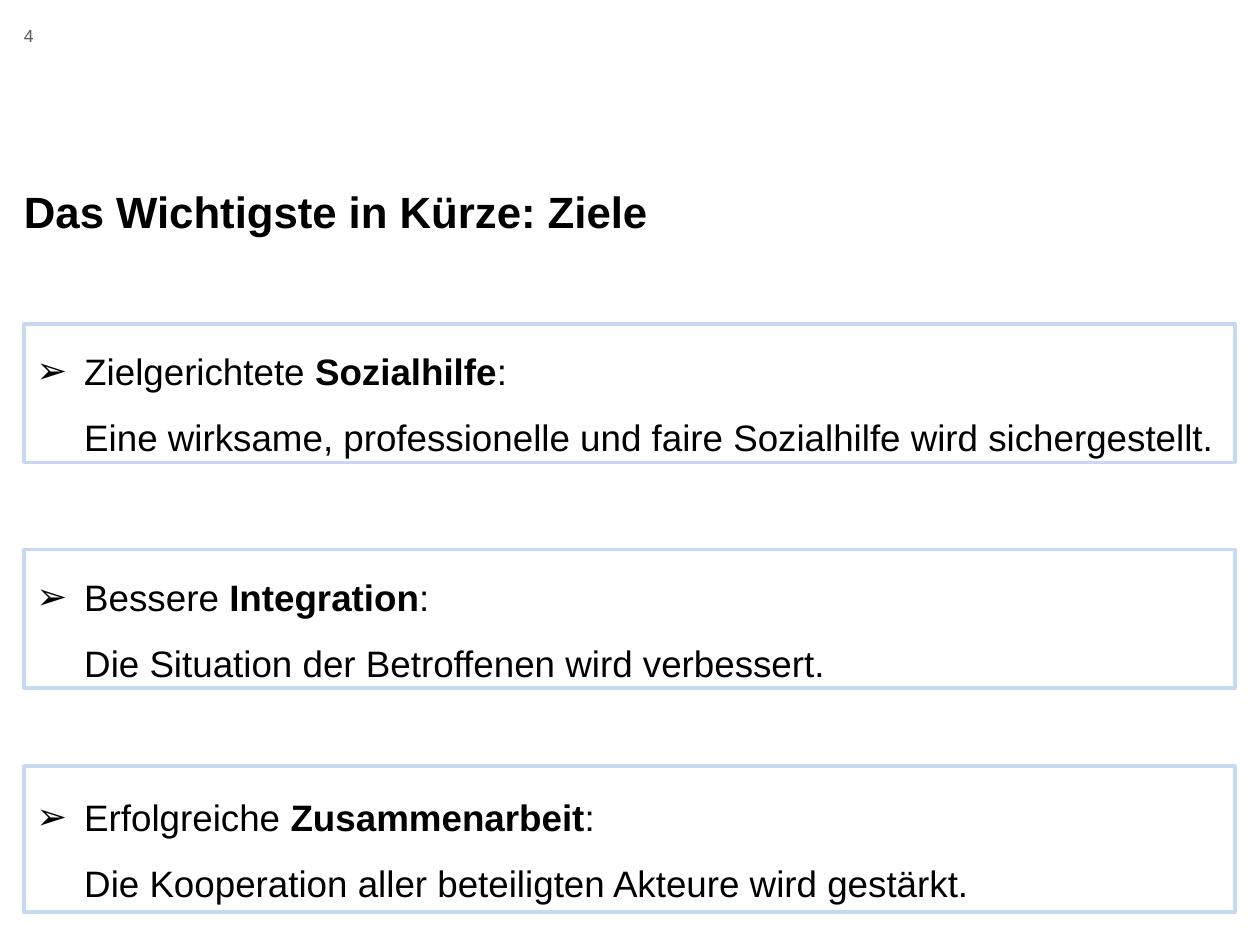
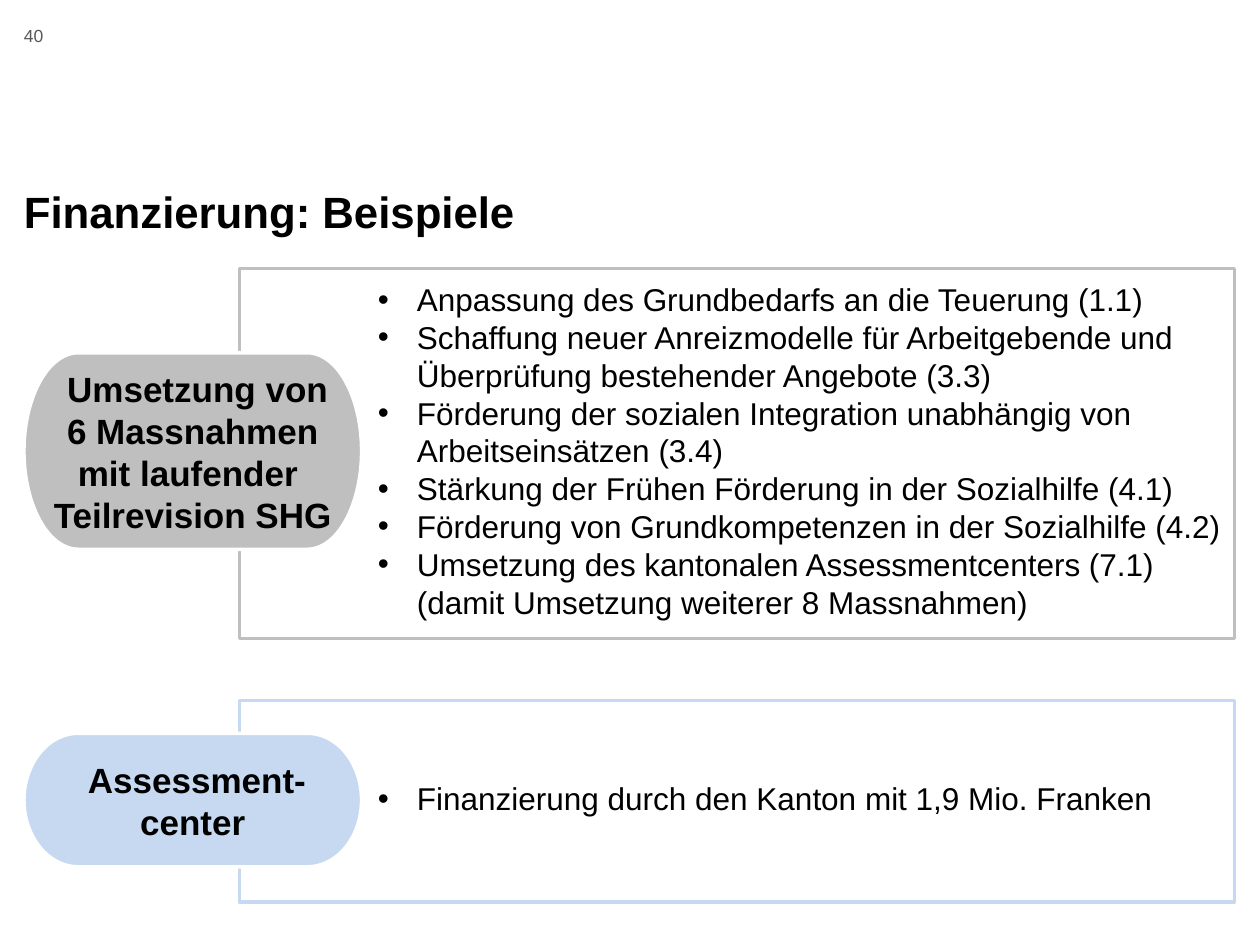
from lxml import etree
from pptx import Presentation
from pptx import util as u
from pptx.dml import color
from pptx.enum import shapes, text
from pptx.oxml import ns

PX = 9144
FONT = "Arial"
BLACK, WHITE, SLATE = "000000", "FFFFFF", "555959"
LIGHT_BLUE, GREY = "C6D9F1", "BFBFBF"
LEFT, CONTENT_WIDTH = 19, 961
BODY_LEFT, BODY_WIDTH = 190, 790
LABEL_WIDTH = 268


def px(length):
    return u.Emu(length * PX)


def rgb(value):
    return color.RGBColor.from_string(value)


class Deck:
    def __init__(self):
        self.presentation = Presentation()
        self.presentation.slide_width = px(1000)
        self.presentation.slide_height = px(750)
        self.slide = None

    def start(self, number, heading):
        layout = self.presentation.slide_layouts.get_by_name("Title Only")
        self.slide = self.presentation.slides.add_slide(layout)
        page = self.slide.shapes.add_textbox(px(LEFT), px(20), px(44), px(40))
        frame = self.frame(page, (0, 0, 0, 0), text.MSO_ANCHOR.TOP)
        self.run(frame.paragraphs[0], number, 10, SLATE)
        self.title(heading)

    def title(self, heading):
        title = self.slide.shapes.title
        title.left, title.top = px(LEFT), px(106)
        title.width, title.height = px(CONTENT_WIDTH), px(81)
        frame = self.frame(title, (0, 0, 0, 0), text.MSO_ANCHOR.BOTTOM)
        paragraph = frame.paragraphs[0]
        paragraph.alignment = text.PP_ALIGN.LEFT
        paragraph.line_spacing = 0.7
        self.run(paragraph, heading, 25, bold=True)

    def frame(self, shape, insets, anchor=text.MSO_ANCHOR.MIDDLE):
        frame = shape.text_frame
        frame.word_wrap = True
        frame.auto_size = text.MSO_AUTO_SIZE.NONE
        frame.vertical_anchor = anchor
        (frame.margin_left, frame.margin_top,
         frame.margin_right, frame.margin_bottom) = map(px, insets)
        return frame

    def paragraph(self, frame, index):
        return frame.add_paragraph() if index else frame.paragraphs[0]

    def run(self, paragraph, words, size, tint=BLACK, bold=False):
        for index, line in enumerate(words.split("\n")):
            if index:
                paragraph.add_line_break()
            run = paragraph.add_run()
            run.text = line
            run.font.name = FONT
            run.font.size = u.Pt(size)
            run.font.bold = bold
            run.font.color.rgb = rgb(tint)

    def bullet(self, paragraph, mark, indent):
        paragraph.alignment = text.PP_ALIGN.LEFT
        properties = paragraph._p.get_or_add_pPr()
        properties.set("marL", str(px(indent)))
        properties.set("indent", str(-px(indent)))
        etree.SubElement(properties, ns.qn("a:buFont")).set("typeface", FONT)
        etree.SubElement(properties, ns.qn("a:buChar")).set("char", mark)

    def panel(self, kind, box, line, fill=None):
        panel = self.slide.shapes.add_shape(kind, *map(px, box))
        panel.shadow.inherit = False
        panel.line.color.rgb = rgb(line)
        panel.line.width = u.Pt(2)
        if fill:
            panel.fill.solid()
            panel.fill.fore_color.rgb = rgb(fill)
        else:
            panel.fill.background()
        return panel

    def goal(self, top, height, lead, keyword, sentence):
        box = (LEFT, top, CONTENT_WIDTH, height)
        panel = self.panel(shapes.MSO_SHAPE.RECTANGLE, box, LIGHT_BLUE)
        paragraph = self.frame(panel, (10, 5, 10, 5)).paragraphs[0]
        self.bullet(paragraph, "➢", 38)
        paragraph.line_spacing = 1.5
        self.run(paragraph, lead + " ", 21)
        self.run(paragraph, keyword, 21, bold=True)
        self.run(paragraph, ":\n" + sentence, 21)

    def measures(self, top, height, tint, items):
        box = (BODY_LEFT, top, BODY_WIDTH, height)
        panel = self.panel(shapes.MSO_SHAPE.RECTANGLE, box, tint)
        frame = self.frame(panel, (110, 5, 10, 10))
        for index, item in enumerate(items):
            paragraph = self.paragraph(frame, index)
            self.bullet(paragraph, "•", 31)
            self.run(paragraph, item, 18)

    def label(self, top, height, tint, lines):
        box = (LEFT, top, LABEL_WIDTH, height)
        panel = self.panel(shapes.MSO_SHAPE.FLOWCHART_TERMINATOR, box, WHITE, tint)
        frame = self.frame(panel, (10, 0, 10, 0))
        for index, line in enumerate(lines):
            paragraph = self.paragraph(frame, index)
            paragraph.alignment = text.PP_ALIGN.CENTER
            self.run(paragraph, line, 20, bold=True)


def add_goals(deck):
    deck.start("4", "Das Wichtigste in Kürze: Ziele")
    goals = [
        (257, 110, "Zielgerichtete", "Sozialhilfe",
         "Eine wirksame, professionelle und faire Sozialhilfe wird sichergestellt."),
        (436, 110, "Bessere", "Integration",
         "Die Situation der Betroffenen wird verbessert."),
        (608, 116, "Erfolgreiche", "Zusammenarbeit",
         "Die Kooperation aller beteiligten Akteure wird gestärkt."),
    ]
    for goal in goals:
        deck.goal(*goal)


def add_financing(deck):
    deck.start("40", "Finanzierung: Beispiele")
    deck.measures(213, 294, GREY, [
        "Anpassung des Grundbedarfs an die Teuerung (1.1)",
        "Schaffung neuer Anreizmodelle für Arbeitgebende und "
        "Überprüfung bestehender Angebote (3.3)",
        "Förderung der sozialen Integration unabhängig von Arbeitseinsätzen (3.4)",
        "Stärkung der Frühen Förderung in der Sozialhilfe (4.1)",
        "Förderung von Grundkompetenzen in der Sozialhilfe (4.2)",
        "Umsetzung des kantonalen Assessmentcenters (7.1)\n"
        "(damit Umsetzung weiterer 8 Massnahmen)",
    ])
    deck.label(280, 156, GREY, [
        " Umsetzung von 6 Massnahmen mit laufender ", "Teilrevision SHG"])
    deck.measures(556, 160, LIGHT_BLUE, [
        "Finanzierung durch den Kanton mit 1,9 Mio. Franken"])
    deck.label(582, 106, LIGHT_BLUE, [" Assessment-center"])


def main():
    deck = Deck()
    add_goals(deck)
    add_financing(deck)
    deck.presentation.save("out.pptx")


if __name__ == "__main__":
    main()
